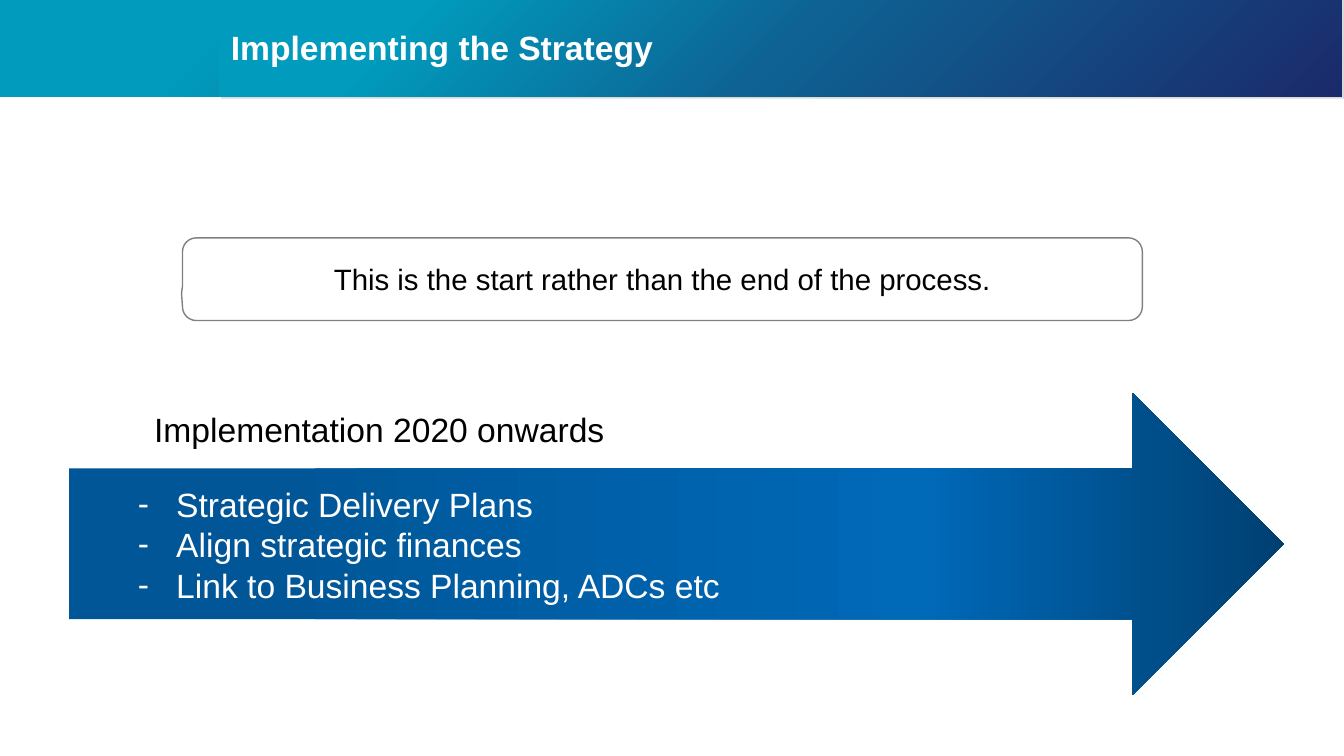
from copy import deepcopy
from dataclasses import dataclass

from lxml.etree import SubElement
from pptx import Presentation
from pptx.dml.color import RGBColor
from pptx.enum.shapes import MSO_CONNECTOR, MSO_SHAPE
from pptx.enum.text import MSO_ANCHOR, MSO_AUTO_SIZE, PP_ALIGN
from pptx.oxml.ns import qn
from pptx.util import Inches, Pt


@dataclass(frozen=True)
class Theme:
    """Colours, font and type sizes of the slide."""
    font: str = "Arial"
    heading_size: int = 24
    callout_size: int = 21
    light: str = "FFFFFF"
    dark: str = "000000"
    outline: str = "808080"
    backing: str = "D9D9D9"
    band: tuple = ((17, "009BBD"), (50, "0E6394"), (100, "1B2A6B"))
    arrow: tuple = ((17, "005697"), (70, "0069B8"), (100, "004071"))


THEME = Theme()


def write_text(frame, text, size=THEME.heading_size, color=THEME.dark, bold=False,
               align=PP_ALIGN.LEFT, anchor=MSO_ANCHOR.TOP, spacing=None, bullet=None,
               fit=MSO_AUTO_SIZE.NONE):
    """Fill a text frame with one paragraph per line of text."""
    frame.word_wrap = True
    frame.auto_size = fit
    frame.vertical_anchor = anchor
    frame.text = text
    for paragraph in frame.paragraphs:
        paragraph.alignment = align
        if spacing:
            paragraph.line_spacing = spacing
        if bullet:
            properties = paragraph._p.get_or_add_pPr()
            properties.set("marL", str(Inches(0.38)))
            properties.set("indent", str(-Inches(0.38)))
            SubElement(properties, qn("a:buFont"), typeface=THEME.font)
            SubElement(properties, qn("a:buChar"), char=bullet)
        for run in paragraph.runs:
            run.font.name = THEME.font
            run.font.size = Pt(size)
            run.font.bold = bold
            run.font.color.rgb = RGBColor.from_string(color)


def add_plain_shape(slide, kind, left, top, width, height):
    """Add a preset shape without shadow, line or fill."""
    shape = slide.shapes.add_shape(kind, Inches(left), Inches(top), Inches(width), Inches(height))
    shape.shadow.inherit = False
    shape.line.fill.background()
    shape.fill.background()
    return shape


def add_text(slide, left, top, width, height, text, **style):
    """Add a text box that grows with its text."""
    label = slide.shapes.add_textbox(Inches(left), Inches(top), Inches(width), Inches(height))
    write_text(label.text_frame, text, fit=MSO_AUTO_SIZE.SHAPE_TO_FIT_TEXT, **style)


def fill_gradient(shape, stops, angle):
    """Give a shape a linear gradient, with its angle counted counter-clockwise."""
    shape.fill.gradient()
    shape.fill.gradient_angle = angle
    stop_list = shape._element.spPr.find(qn("a:gradFill")).find(qn("a:gsLst"))
    for _ in range(len(stops) - len(stop_list)):
        stop_list.append(deepcopy(stop_list[-1]))
    for stop, (percent, color) in zip(shape.fill.gradient_stops, stops):
        stop.position = percent / 100
        stop.color.rgb = RGBColor.from_string(color)


def add_gradient_band(slide, left, top, width, height):
    """Add a header band whose gradient is turned by flipping the shape."""
    band = add_plain_shape(slide, MSO_SHAPE.RECTANGLE, left, top, width, height)
    fill_gradient(band, THEME.band, 135)
    for flip in ("flipH", "flipV"):
        band._element.spPr.xfrm.set(flip, "1")


def build_header(slide, left, top, width, height, title_text):
    """Build the header bands, their divider and the title."""
    inset = left + 2.19
    inner_width = width - 2.19
    add_gradient_band(slide, left, top - 0.02, width, height)
    backing = add_plain_shape(slide, MSO_SHAPE.RECTANGLE, inset, top, inner_width, height)
    backing.fill.solid()
    backing.fill.fore_color.rgb = RGBColor.from_string(THEME.backing)
    divider = slide.shapes.add_connector(
        MSO_CONNECTOR.STRAIGHT, Inches(inset - 0.01), Inches(top),
        Inches(inset - 0.01), Inches(top + height))
    divider.line.color.rgb = RGBColor.from_string(THEME.light)
    divider.line.width = Pt(0.5)
    SubElement(divider._element.spPr, qn("a:effectLst"))
    add_gradient_band(slide, inset - 0.02, top - 0.02, inner_width, height)

    title = slide.shapes.title
    slide.shapes._spTree.append(title._element)
    title.left, title.top = Inches(inset), Inches(top + 0.11)
    title.width, title.height = Inches(inner_width), Inches(0.76)
    write_text(title.text_frame, title_text, color=THEME.light, bold=True,
               anchor=MSO_ANCHOR.MIDDLE, spacing=0.9)


def build_timeline(slide, left, top, width, height, heading, steps):
    """Build the wide arrow with its heading and list of steps."""
    arrow = add_plain_shape(slide, MSO_SHAPE.RIGHT_ARROW, left, top, width, height)
    fill_gradient(arrow, THEME.arrow, 0)
    add_text(slide, left + 0.75, top + 0.11, 7.72, 0.5, heading)
    add_text(slide, left + 0.59, top + 0.85, 10.27, 1.31, "\n".join(steps),
             color=THEME.light, bullet="-")


def build_callout(slide, left, top, width, height, message):
    """Build the outlined callout with a centred message."""
    callout = add_plain_shape(slide, MSO_SHAPE.ROUNDED_RECTANGULAR_CALLOUT,
                              left, top, width, height)
    for index, value in enumerate((-0.501, 0.17, 0.167)):
        callout.adjustments[index] = value
    callout.line.color.rgb = RGBColor.from_string(THEME.outline)
    callout.line.width = Pt(1)
    write_text(callout.text_frame, message, size=THEME.callout_size,
               align=PP_ALIGN.CENTER, anchor=MSO_ANCHOR.MIDDLE)


def main():
    """Build and save the slide."""
    deck = Presentation()
    deck.slide_width, deck.slide_height = Inches(13.33), Inches(7.5)
    slide = deck.slides.add_slide(deck.slide_layouts[5])
    build_header(slide, 0, 0, 13.33, 0.98, "Implementing the Strategy")
    build_timeline(slide, 0.68, 3.9, 12.05, 2.99, "Implementation 2020 onwards", (
        "Strategic Delivery Plans",
        "Align strategic finances",
        "Link to Business Planning, ADCs etc",
    ))
    build_callout(slide, 1.81, 2.36, 9.52, 0.82,
                  "This is the start rather than the end of the process.")
    deck.save("out.pptx")


if __name__ == "__main__":
    main()
